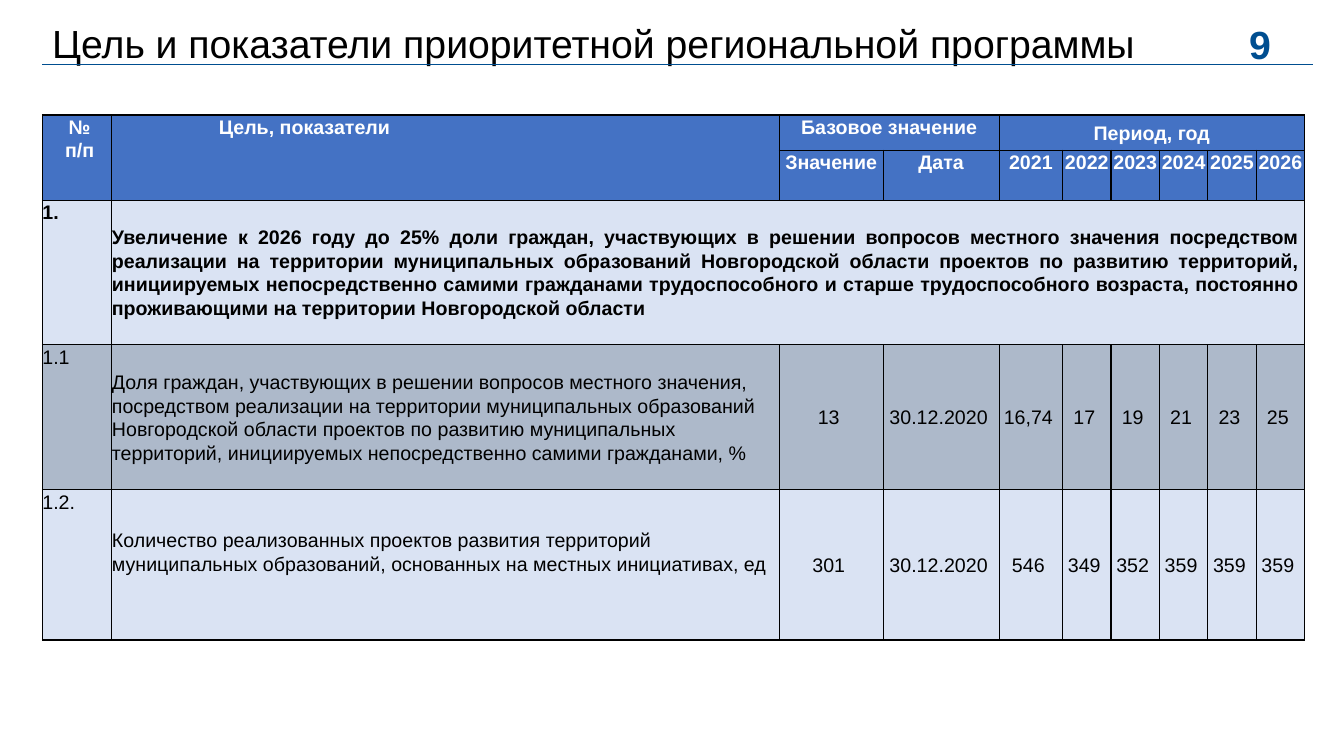
"""Build the slide with the goal and indicators of the regional programme."""
from lxml.etree import SubElement
from pptx import Presentation
from pptx.dml.color import RGBColor
from pptx.enum.shapes import MSO_CONNECTOR
from pptx.enum.text import MSO_ANCHOR as ANCHOR, PP_ALIGN as ALIGN
from pptx.oxml import parse_xml
from pptx.oxml.ns import nsdecls, qn
from pptx.util import Inches, Pt

COLORS = {"accent": "004E90", "header": "4472C4", "light": "DAE3F3",
          "dark": "ADB9CA", "white": "FFFFFF", "black": "000000"}


def style_text(paragraph, size, color, bold, spacing):
    paragraph.line_spacing = spacing
    for run in paragraph.runs:
        run.font.name = "Arial"
        run.font.size = Pt(size)
        run.font.bold = bold
        run.font.color.rgb = RGBColor.from_string(COLORS[color])


def add_borders(cell):
    properties = cell._tc.get_or_add_tcPr()
    for index, side in enumerate(("lnL", "lnR", "lnT", "lnB")):
        properties.insert(index, parse_xml(
            f'<a:{side} {nsdecls("a")} w="12700"><a:solidFill>'
            f'<a:srgbClr val="{COLORS["black"]}"/></a:solidFill></a:{side}>'))


prs = Presentation()
prs.slide_width, prs.slide_height = Inches(13.33), Inches(7.5)
slide = prs.slides.add_slide(prs.slide_layouts[6])

headings = [
    ("9", 12.29, 0.29, 0.74, 0.35, "accent", True),
    ("Цель и показатели приоритетной региональной программы",
     0.42, 0.33, 11.37, 0.25, "black", False),
]
for text, left, top, width, height, color, bold in headings:
    heading = slide.shapes.add_textbox(
        Inches(left), Inches(top), Inches(width), Inches(height)).text_frame
    heading.word_wrap = True
    heading.vertical_anchor = ANCHOR.MIDDLE
    heading.text = text
    style_text(heading.paragraphs[0], 28, color, bold, 0.9)

title_rule = slide.shapes.add_connector(
    MSO_CONNECTOR.STRAIGHT, Inches(0.42), Inches(0.64), Inches(13.02), Inches(0.64))
title_rule.line.color.rgb = RGBColor.from_string(COLORS["accent"])
title_rule.line.width = Pt(1)
SubElement(title_rule._element.spPr, qn("a:effectLst"))

column_widths = [0.69, 6.62, 1.03, 1.15, 0.63] + [0.48] * 5
row_heights = [0.35, 0.46, 1.43, 1.44, 1.49]
row_fills = ["header", "header", "light", "dark", "light"]
years = [str(year) for year in range(2021, 2027)]
rows = [
    ["№ п/п", "Цель, показатели", "Базовое значение", "", "Период, год"] + [""] * 5,
    ["", "", "Значение", "Дата"] + years,
    ["1.", "Увеличение к 2026 году до 25% доли граждан, участвующих в решении вопросов "
     "местного значения посредством реализации на территории муниципальных образований "
     "Новгородской области проектов по развитию территорий, инициируемых непосредственно "
     "самими гражданами трудоспособного и старше трудоспособного возраста, постоянно "
     "проживающими на территории Новгородской области"] + [""] * 8,
    ["1.1", "Доля граждан, участвующих в решении вопросов местного значения, посредством "
     "реализации на территории муниципальных образований Новгородской области проектов по "
     "развитию муниципальных территорий, инициируемых непосредственно самими гражданами, %",
     "13", "30.12.2020", "16,74", "17", "19", "21", "23", "25"],
    ["1.2.", "Количество реализованных проектов развития территорий муниципальных "
     "образований, основанных на местных инициативах, ед",
     "301", "30.12.2020", "546", "349", "352", "359", "359", "359"],
]
indicators = slide.shapes.add_table(
    len(rows), len(column_widths), Inches(0.42), Inches(1.14),
    Inches(sum(column_widths)), Inches(sum(row_heights))).table
for column, width in zip(indicators.columns, column_widths):
    column.width = Inches(width)
for row, height in zip(indicators.rows, row_heights):
    row.height = Inches(height)

for r, (texts, fill) in enumerate(zip(rows, row_fills)):
    is_header = r < 2
    for c, text in enumerate(texts):
        cell = indicators.cell(r, c)
        cell.margin_left = cell.margin_top = cell.margin_bottom = 0
        cell.margin_right = 0 if is_header and c > 0 else Inches(0.05)
        cell.fill.solid()
        cell.fill.fore_color.rgb = RGBColor.from_string(COLORS[fill])
        add_borders(cell)
        cell.vertical_anchor = ANCHOR.TOP if is_header or c == 0 else ANCHOR.MIDDLE
        cell.text = text
        paragraph = cell.text_frame.paragraphs[0]
        paragraph.alignment = ALIGN.LEFT if c < 2 else ALIGN.CENTER
        if c == 0 or (r, c) == (0, 1):
            paragraph.space_before = Pt(3)
        style_text(paragraph, 14, "white" if is_header else "black", r < 3, 1.07)

number_header, goal_header = indicators.cell(0, 0), indicators.cell(0, 1)
number_header.text_frame.paragraphs[0].alignment = ALIGN.CENTER
for header, indent in ((number_header, 0.1), (goal_header, 1.06)):
    header.text_frame.paragraphs[0]._p.get_or_add_pPr().set("marL", str(Inches(indent)))
indicators.cell(0, 4).vertical_anchor = ANCHOR.MIDDLE
indicators.cell(2, 1).text_frame.paragraphs[0].alignment = ALIGN.JUSTIFY
indicators.cell(4, 1).margin_bottom = Inches(0.26)

for first, last in [((0, 0), (1, 0)), ((0, 1), (1, 1)), ((0, 2), (0, 3)),
                    ((0, 4), (0, 9)), ((2, 1), (2, 9))]:
    indicators.cell(*first).merge(indicators.cell(*last))

prs.save("out.pptx")
